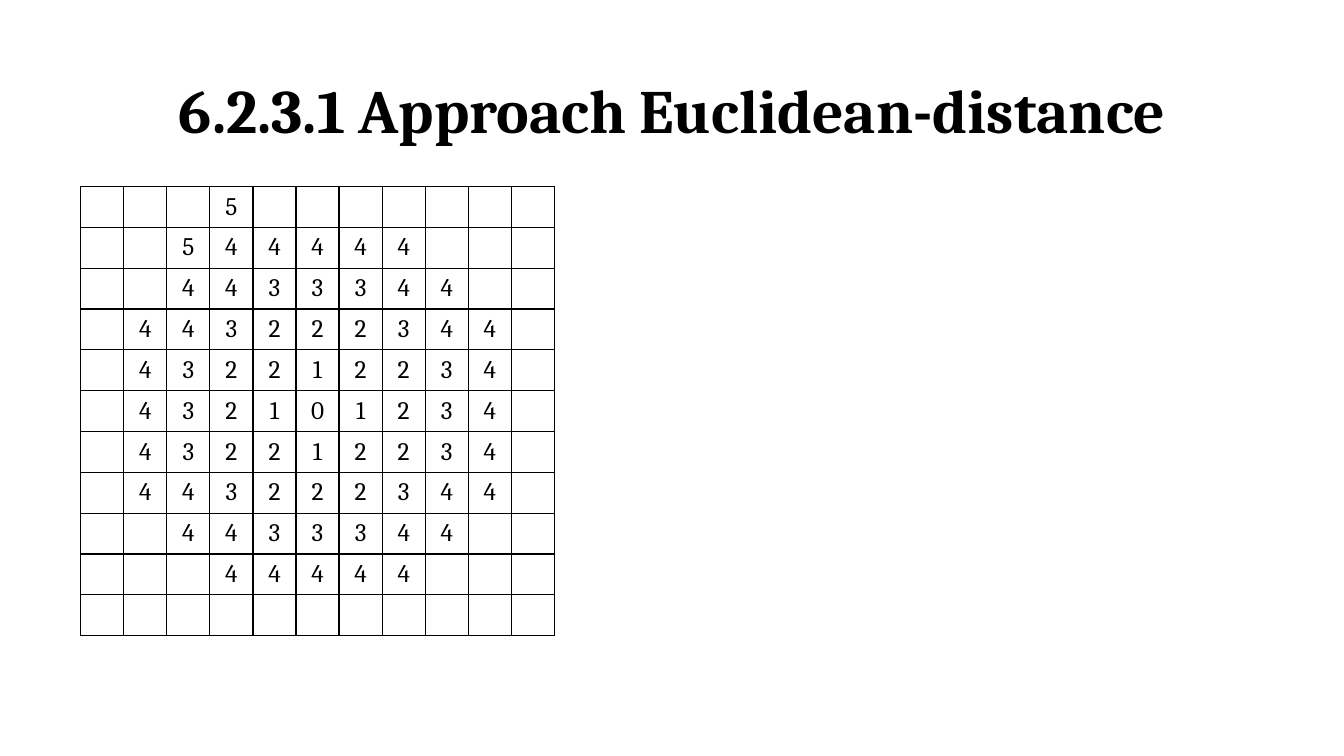
from lxml.etree import SubElement
from pptx import Presentation
from pptx.dml.color import RGBColor
from pptx.enum.text import MSO_ANCHOR as Anchor, PP_ALIGN as Align
from pptx.oxml.ns import qn
from pptx.util import Inches, Pt

DISTANCE_ROWS = [
    "   5       ",
    "  544444   ",
    "  4433344  ",
    " 443222344 ",
    " 432212234 ",
    " 432101234 ",
    " 432212234 ",
    " 443222344 ",
    "  4433344  ",
    "   44444   ",
    "           ",
]


def color(value):
    return RGBColor.from_string(value)


class SlideBuilder:
    font_name = "Cambria"
    ink = "000000"
    paper = "FFFFFF"

    def __init__(self, presentation):
        self.slide = presentation.slides.add_slide(presentation.slide_layouts[6])

    def style(self, paragraph, size, bold=False):
        paragraph.alignment = Align.CENTER
        paragraph.font.name = self.font_name
        paragraph.font.size = Pt(size)
        paragraph.font.bold = bold
        paragraph.font.color.rgb = color(self.ink)

    def title(self, text, left, top, width, height):
        shape = self.slide.shapes.add_textbox(
            Inches(left), Inches(top), Inches(width), Inches(height))
        frame = shape.text_frame
        frame.word_wrap = True
        frame.vertical_anchor = Anchor.MIDDLE
        paragraph = frame.paragraphs[0]
        paragraph.text = text
        paragraph.line_spacing = 0.9
        self.style(paragraph, 44, bold=True)

    def borders(self, cell, width):
        properties = cell._tc.get_or_add_tcPr()
        for side in ("lnL", "lnR", "lnT", "lnB"):
            line = SubElement(properties, qn(f"a:{side}"), w=str(Pt(width)))
            fill = SubElement(line, qn("a:solidFill"))
            SubElement(fill, qn("a:srgbClr"), val=self.ink)

    def grid(self, rows, left, top, width, height):
        table = self.slide.shapes.add_table(
            len(rows), len(rows[0]), Inches(left), Inches(top),
            Inches(width), Inches(height)).table
        table.first_row = False
        table.horz_banding = False
        for row_index, values in enumerate(rows):
            for column_index, value in enumerate(values):
                cell = table.cell(row_index, column_index)
                self.borders(cell, 1)
                cell.fill.solid()
                cell.fill.fore_color.rgb = color(self.paper)
                cell.vertical_anchor = Anchor.MIDDLE
                cell.margin_top = cell.margin_bottom = Inches(0.02)
                paragraph = cell.text_frame.paragraphs[0]
                paragraph.text = value.strip()
                self.style(paragraph, 18)


def main():
    presentation = Presentation()
    presentation.slide_width = Inches(13.33)
    presentation.slide_height = Inches(7.5)
    builder = SlideBuilder(presentation)
    builder.title("6.2.3.1 Approach Euclidean-distance", 0.92, 0.4, 11.5, 1.45)
    builder.grid(DISTANCE_ROWS, 0.8, 1.85, 4.7, 4.46)
    presentation.save("out.pptx")


if __name__ == "__main__":
    main()
